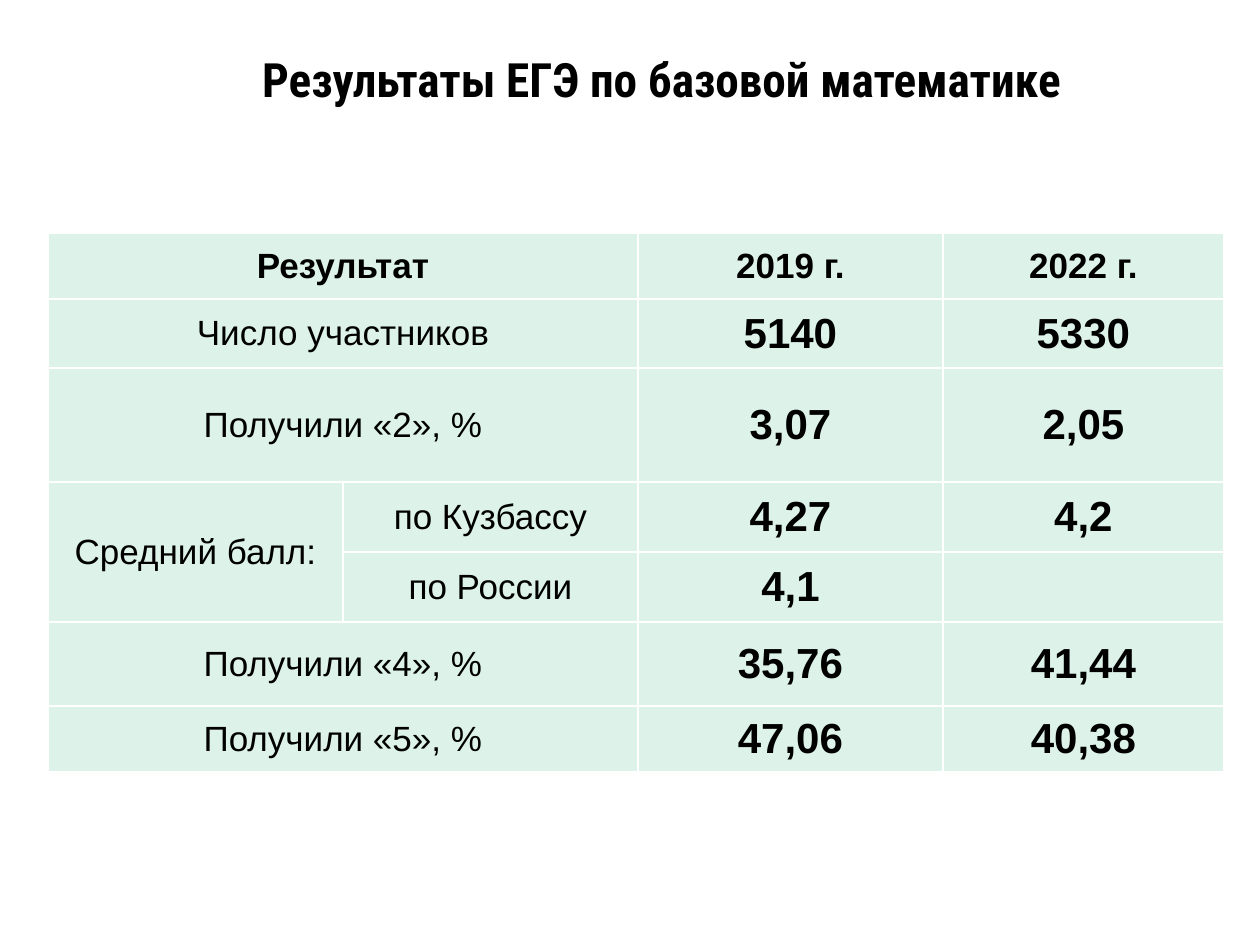
from dataclasses import dataclass

from lxml import etree
from pptx import Presentation
from pptx.dml.color import RGBColor
from pptx.enum.text import MSO_ANCHOR, PP_ALIGN
from pptx.oxml.ns import qn
from pptx.util import Emu, Pt

PX_PER_INCH = 126
TITLE_ONLY = 5
CENTER = PP_ALIGN.CENTER
MIDDLE = MSO_ANCHOR.MIDDLE

BLACK = RGBColor(0x00, 0x00, 0x00)
WHITE = RGBColor(0xFF, 0xFF, 0xFF)
MINT = RGBColor(0xDD, 0xF3, 0xEA)

TITLE = "Результаты ЕГЭ по базовой математике"
COLUMN_WIDTHS = (295, 295, 305, 281)
LABEL_COLUMNS = 2


@dataclass(frozen=True)
class ResultRow:
    height: int
    label: str
    sublabel: str
    values: tuple[str, str]


RESULTS = (
    ResultRow(66, "Результат", "", ("2019 г.", "2022 г.")),
    ResultRow(69, "Число участников", "", ("5140", "5330")),
    ResultRow(114, "Получили «2», %", "", ("3,07", "2,05")),
    ResultRow(70, "Средний балл:", "по Кузбассу", ("4,27", "4,2")),
    ResultRow(70, "", "по России", ("4,1", "")),
    ResultRow(84, "Получили «4», %", "", ("35,76", "41,44")),
    ResultRow(66, "Получили «5», %", "", ("47,06", "40,38")),
)


def px(length: int) -> Emu:
    return Emu(round(length * 914400 / PX_PER_INCH))


def format_text(text_frame, font_name: str, size: int, bold: bool) -> None:
    paragraph = text_frame.paragraphs[0]
    paragraph.alignment = CENTER
    for run in paragraph.runs:
        run.font.name = font_name
        run.font.size = Pt(size)
        run.font.bold = bold
        run.font.color.rgb = BLACK


def add_borders(cell) -> None:
    """Insert the four side lines ahead of the cell's fill, as the schema requires."""
    properties = cell._tc.get_or_add_tcPr()
    for position, side in enumerate(("lnL", "lnR", "lnT", "lnB")):
        line = etree.Element(qn(f"a:{side}"), w=str(Pt(1)))
        fill = etree.SubElement(line, qn("a:solidFill"))
        etree.SubElement(fill, qn("a:srgbClr"), val=str(WHITE))
        properties.insert(position, line)


def fill_cell(cell, text: str, size: int, bold: bool) -> None:
    cell.fill.solid()
    cell.fill.fore_color.rgb = MINT
    cell.vertical_anchor = MIDDLE
    cell.margin_left = cell.margin_right = px(10)
    cell.margin_top = cell.margin_bottom = 0
    add_borders(cell)
    cell.text_frame.text = text
    format_text(cell.text_frame, "Arial", size, bold)


def add_title(slide) -> None:
    title = slide.shapes.title
    title.left, title.top, title.width, title.height = map(px, (63, 21, 1197, 115))
    title.text_frame.text = TITLE
    title.text_frame.vertical_anchor = MIDDLE
    format_text(title.text_frame, "Roboto Condensed", 27, True)


def add_results_table(slide) -> None:
    heights = [result.height for result in RESULTS]
    table = slide.shapes.add_table(
        len(RESULTS), len(COLUMN_WIDTHS), px(48), px(233),
        px(sum(COLUMN_WIDTHS)), px(sum(heights)),
    ).table
    for column, width in zip(table.columns, COLUMN_WIDTHS):
        column.width = px(width)

    for row_index, result in enumerate(RESULTS):
        table.rows[row_index].height = px(result.height)
        is_header = row_index == 0
        for column_index, text in enumerate((result.label, result.sublabel, *result.values)):
            is_value = column_index >= LABEL_COLUMNS
            size = 24 if is_value and not is_header else 20
            fill_cell(table.cell(row_index, column_index), text, size, is_header or is_value)

        label_cell = table.cell(row_index, 0)
        if not result.sublabel:
            label_cell.merge(table.cell(row_index, 1))
        elif not result.label:
            table.cell(row_index - 1, 0).merge(label_cell)


def main() -> None:
    presentation = Presentation()
    presentation.slide_width = px(1260)
    presentation.slide_height = px(945)
    slide = presentation.slides.add_slide(presentation.slide_layouts[TITLE_ONLY])
    slide.background.fill.solid()
    slide.background.fill.fore_color.rgb = WHITE
    add_title(slide)
    add_results_table(slide)
    presentation.save("out.pptx")


if __name__ == "__main__":
    main()
